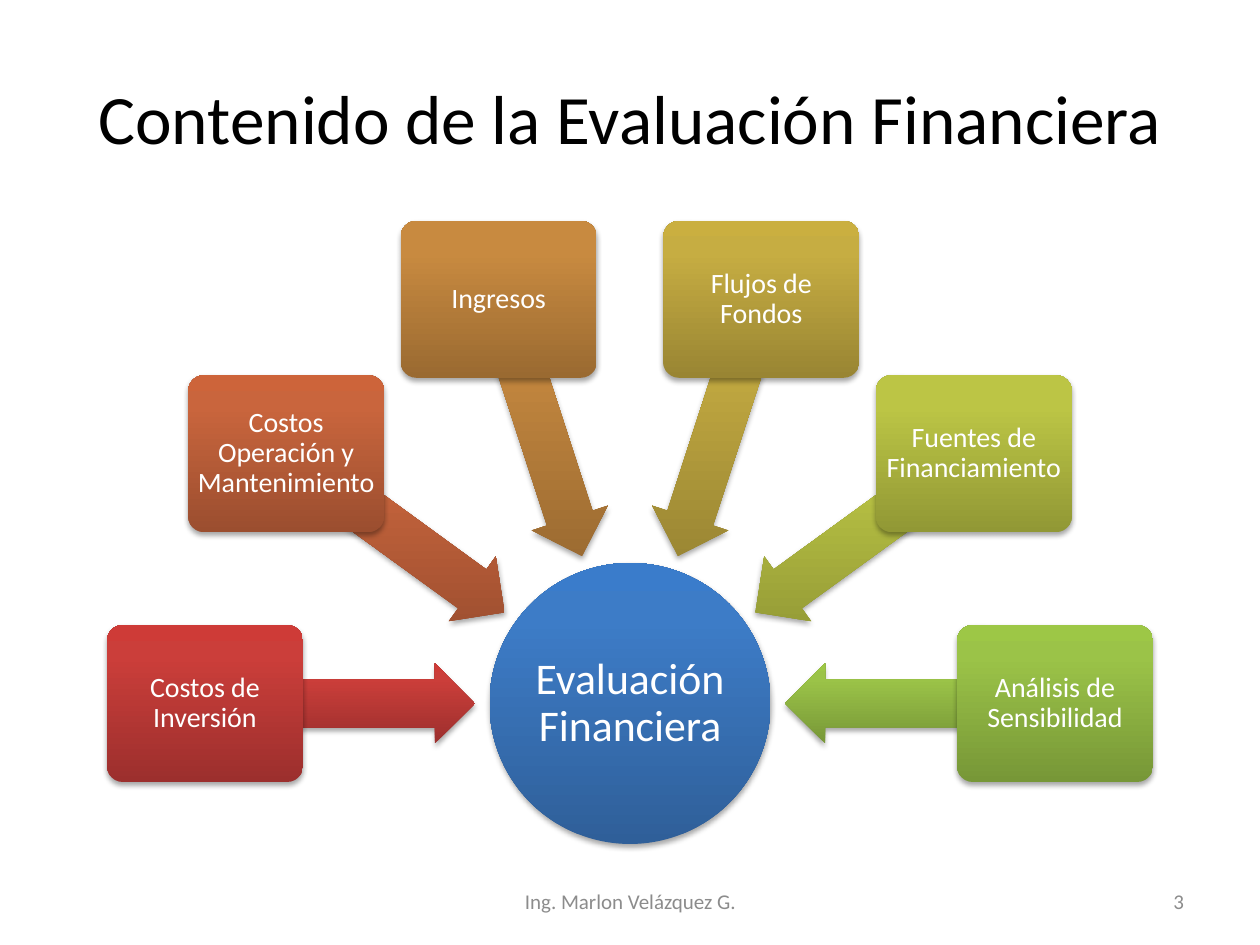
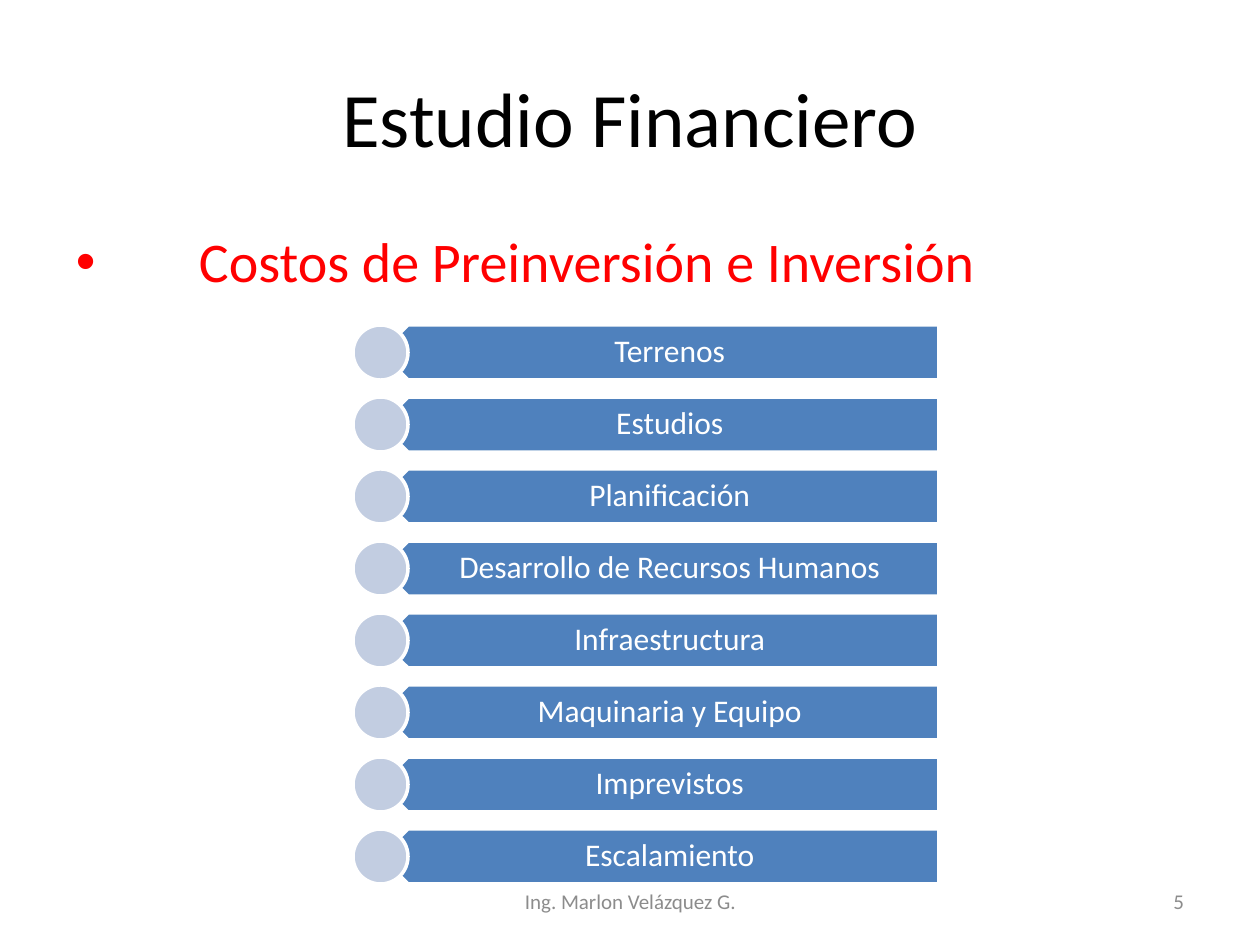
from collections import namedtuple
from dataclasses import dataclass
from math import cos, radians, sin

from lxml.etree import SubElement
from pptx import Presentation
from pptx.dml.color import RGBColor
from pptx.enum.shapes import MSO_SHAPE
from pptx.enum.text import MSO_ANCHOR, PP_ALIGN
from pptx.oxml import parse_xml
from pptx.oxml.ns import nsdecls, qn
from pptx.util import Emu, Pt

EMU_PER_PX = 914400 / 126

Box = namedtuple("Box", "left top width height")


@dataclass(frozen=True)
class Theme:
    font: str = "Calibri"
    black: str = "000000"
    white: str = "FFFFFF"
    muted: str = "8C8C8C"
    accent: str = "FF0000"
    bar: str = "4F81BD"
    dot: str = "C2CDE1"
    hub: tuple = ("2F5F99", "3D7CC7", "3A7CCB")
    title_size: float = 44
    long_title_size: float = 39.6
    heading_size: float = 32
    hub_size: float = 25
    bar_size: float = 18
    card_size: float = 16
    footer_size: float = 12


THEME = Theme()
PAGE = Box(0, 0, 1260, 945)
FOOTER = "Ing. Marlon Velázquez G."

# Label and gradient (dark, middle, light) of each card, clockwise from the left
TOPICS = [
    ("Costos de Inversión", ("9C2F2D", "CB3E3A", "CE3B37")),
    ("Costos Operación y Mantenimiento", ("9B4E2F", "C9653D", "CD643A")),
    ("Ingresos", ("9A6A31", "C88A40", "CB8B3D")),
    ("Flujos de Fondos", ("998533", "C6AD42", "CAAF40")),
    ("Fuentes de Financiamiento", ("919835", "BCC545", "BFC843")),
    ("Análisis de Sensibilidad", ("779737", "9BC348", "9DC746")),
]
COSTS = [
    "Terrenos", "Estudios", "Planificación", "Desarrollo de Recursos Humanos",
    "Infraestructura", "Maquinaria y Equipo", "Imprevistos", "Escalamiento",
]


# Shared helpers

def px(length):
    return Emu(round(length * EMU_PER_PX))


def place(box):
    return [px(length) for length in box]


def centred(x, y, width, height):
    return Box(x - width / 2, y - height / 2, width, height)


def write(shape, text, size, color, align=PP_ALIGN.CENTER,
          anchor=MSO_ANCHOR.MIDDLE, insets=(13, 6, 13, 6), **spacing):
    frame = shape.text_frame
    margins = zip(("left", "top", "right", "bottom"), insets)
    settings = {f"margin_{side}": px(inset) for side, inset in margins}
    settings.update(word_wrap=True, vertical_anchor=anchor)
    for name, value in settings.items():
        setattr(frame, name, value)
    para = frame.paragraphs[0]
    for name, value in {"alignment": align, **spacing}.items():
        setattr(para, name, value)
    span = para.add_run()
    span.text = text
    for name, value in {"name": THEME.font, "size": Pt(size)}.items():
        setattr(span.font, name, value)
    span.font.color.rgb = RGBColor.from_string(color)
    return para


def add_text(page, box, text, size, color, **options):
    return write(page.shapes.add_textbox(*place(box)), text, size, color, **options)


def add_flat(page, kind, box, fill):
    shape = page.shapes.add_shape(kind, *place(box))
    shape.shadow.inherit = False
    shape.fill.solid()
    shape.fill.fore_color.rgb = RGBColor.from_string(fill)
    shape.line.color.rgb = RGBColor.from_string(THEME.white)
    shape.line.width = Pt(2)
    return shape


def add_glossy(page, kind, box, colors, adjustments=(), rotation=0):
    """Add a shape with a vertical gradient and a soft shadow below it."""
    shape = page.shapes.add_shape(kind, *place(box))
    shape.rotation = rotation
    for index, value in enumerate(adjustments):
        shape.adjustments[index] = value
    shape.line.fill.background()
    stops = "".join(
        f'<a:gs pos="{position}"><a:srgbClr val="{color}"/></a:gs>'
        for position, color in zip((0, 80000, 100000), colors))
    gradient = parse_xml(
        f'<a:gradFill {nsdecls("a")} rotWithShape="0"><a:gsLst>{stops}</a:gsLst>'
        '<a:lin ang="16200000" scaled="0"/></a:gradFill>')
    shadow = parse_xml(
        f'<a:effectLst {nsdecls("a")}><a:outerShdw blurRad="40000" dist="23000" '
        'dir="5400000" rotWithShape="0"><a:srgbClr val="000000">'
        '<a:alpha val="35000"/></a:srgbClr></a:outerShdw></a:effectLst>')
    line = shape.line._ln
    line.addprevious(gradient)
    line.addnext(shadow)
    return shape


# Page frame

def add_page(deck, title, title_size, number):
    page = deck.slides.add_slide(deck.slide_layouts[6])
    add_text(page, Box(63, 38, 1134, 157), title, title_size, THEME.black)
    for left, width, text, align in (
            (431, 399, FOOTER, PP_ALIGN.CENTER),
            (903, 294, str(number), PP_ALIGN.RIGHT)):
        add_text(page, Box(left, 876, width, 50), text, THEME.footer_size,
                 THEME.muted, align=align)
    return page


# Hub with cards on a half circle

def add_radial(page, box):
    hub_size, card_width, card_height = 281, 196, 157
    center_x = box.left + box.width / 2
    center_y = box.top + box.height - hub_size / 2
    card_radius, arrow_radius = (box.width - card_width) / 2, 290

    hub = add_glossy(page, MSO_SHAPE.OVAL,
                     centred(center_x, center_y, hub_size, hub_size), THEME.hub)
    write(hub, "Evaluación Financiera", THEME.hub_size, THEME.white,
          insets=(3, 3, 3, 3), line_spacing=0.9)

    step = 180 / (len(TOPICS) - 1)
    for index, (label, colors) in enumerate(TOPICS):
        angle = 180 + index * step
        across, down = cos(radians(angle)), sin(radians(angle))
        add_glossy(page, MSO_SHAPE.LEFT_ARROW,
                   centred(center_x + arrow_radius * across,
                           center_y + arrow_radius * down, 270, 80),
                   colors, (0.6, 0.5), angle % 360)
        card = add_glossy(page, MSO_SHAPE.ROUNDED_RECTANGLE,
                          centred(center_x + card_radius * across,
                                  center_y + card_radius * down,
                                  card_width, card_height),
                          colors, (0.1,))
        write(card, label, THEME.card_size, THEME.white,
              insets=(4, 4, 4, 4), line_spacing=0.9)


# Bulleted heading

def add_heading(page, box, text):
    para = add_text(page, box, text, THEME.heading_size, THEME.accent,
                    align=PP_ALIGN.LEFT, anchor=MSO_ANCHOR.TOP,
                    space_before=Pt(6.4))
    properties = para._p.get_or_add_pPr()
    for name, indent in {"marL": 123, "indent": -123}.items():
        properties.set(name, str(px(indent)))
    SubElement(properties, qn("a:buFont"), typeface="Arial")
    SubElement(properties, qn("a:buChar"), char="•")


# Stack of bars, each with a dot at its left end

def add_bar_list(page, box, labels):
    pitch, height = 72, 55
    for index, label in enumerate(labels):
        top = box.top + index * pitch
        bar_left = box.left + height / 2
        bar_width = box.width - height / 2
        bar = add_flat(page, MSO_SHAPE.PENTAGON,
                       Box(bar_left, top, bar_width, height), THEME.bar)
        bar.rotation = 180
        add_text(page, Box(bar_left + 14, top, bar_width - 14, height), label,
                 THEME.bar_size, THEME.white, insets=(24, 9, 18, 9),
                 line_spacing=0.9)
        add_flat(page, MSO_SHAPE.OVAL, Box(box.left, top, height, height), THEME.dot)


def main():
    deck = Presentation()
    deck.slide_width, deck.slide_height = px(PAGE.width), px(PAGE.height)

    contents = add_page(deck, "Contenido de la Evaluación Financiera",
                        THEME.long_title_size, 3)
    add_radial(contents, Box(107, 221, 1046, 623))

    study = add_page(deck, "Estudio Financiero", THEME.title_size, 5)
    add_heading(study, Box(63, 221, 1134, 90), "Costos de Preinversión e Inversión")
    add_bar_list(study, Box(353, 325, 586, 559), COSTS)

    deck.save("out.pptx")


if __name__ == "__main__":
    main()
